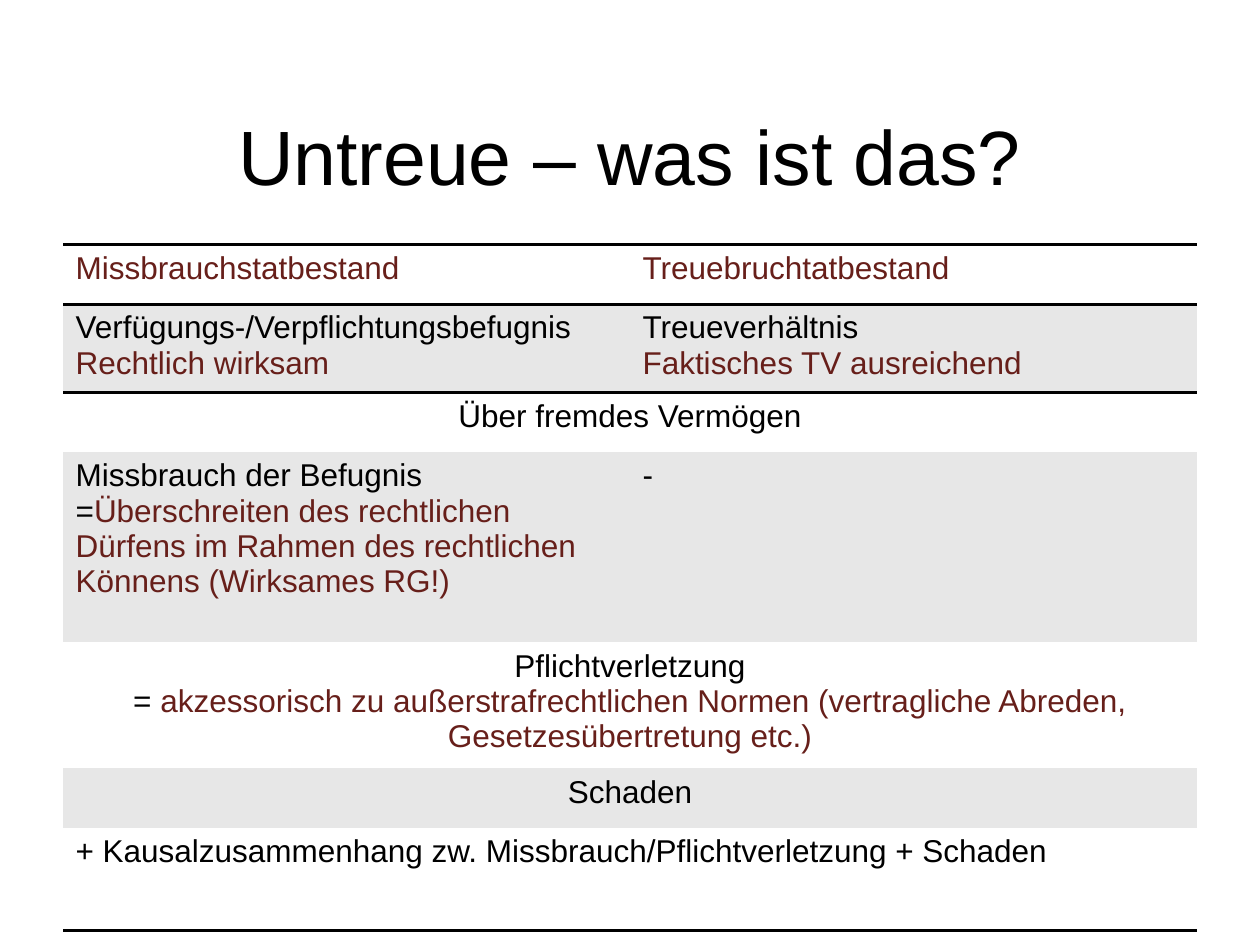
import pptx
import pptx.util
import pptx.dml.color
import pptx.enum.text
import pptx.oxml.ns
from lxml import etree
from pptx.util import Cm

BLACK, RED, GREY, WHITE = "000000", "671F1A", "E7E7E7", "FFFFFF"
PLAIN = "{2D5ABB26-0587-4C30-8999-92F81FD0307C}"  # table style without grid
ALIGN = pptx.enum.text.PP_ALIGN
ROWS = [1.2, 1.2, 1.2, 3.84, 1.2, 1.2, 2.06]

# Each cell is a list of lines, each line a list of (text, colour) runs
CELLS = [
    [[[("Missbrauchstatbestand", RED)]],
     [[("Treuebruchtatbestand", RED)]]],
    [[[("Verfügungs-/Verpflichtungsbefugnis", BLACK)],
      [("Rechtlich wirksam", RED)]],
     [[("Treueverhältnis", BLACK)],
      [("Faktisches TV ausreichend", RED)]]],
    [[[("Über fremdes Vermögen", BLACK)]]],
    [[[("Missbrauch der Befugnis =", BLACK),
       ("Überschreiten des rechtlichen Dürfens im Rahmen des "
        "rechtlichen Könnens (Wirksames RG!)", RED)]],
     [[("-", BLACK)]]],
    [[[("Pflichtverletzung", BLACK)],
      [("= ", BLACK),
       ("akzessorisch zu außerstrafrechtlichen Normen (vertragliche "
        "Abreden, Gesetzesübertretung etc.)", RED)]]],
    [[[("Schaden", BLACK)]]],
    [[[("+ Kausalzusammenhang zw. Missbrauch/Pflichtverletzung + Schaden",
        BLACK)]]],
]


def color(code):
    return pptx.dml.color.RGBColor.from_string(code)


def write(frame, lines, size=18, align=ALIGN.LEFT):
    """Fill a text frame with lines of coloured runs."""
    frame.word_wrap = True
    for i, line in enumerate(lines):
        para = frame.paragraphs[0] if i == 0 else frame.add_paragraph()
        para.alignment = align
        for text, code in line:
            run = para.add_run()
            run.text = text
            run.font.name = "Arial"
            run.font.size = pptx.util.Pt(size)
            run.font.color.rgb = color(code)


def rule(cell, side):
    """Draw a black 2 pt border on the side T or B of a cell."""
    qn = pptx.oxml.ns.qn
    props = cell._tc.get_or_add_tcPr()
    line = etree.SubElement(props, qn("a:ln" + side), w=str(pptx.util.Pt(2)))
    fill = etree.SubElement(line, qn("a:solidFill"))
    etree.SubElement(fill, qn("a:srgbClr"), val=BLACK)


def add_title(slide, text):
    box = slide.shapes.add_textbox(Cm(1.27), Cm(1.52), Cm(22.86), Cm(3.18))
    box.text_frame.vertical_anchor = pptx.enum.text.MSO_ANCHOR.MIDDLE
    write(box.text_frame, [[(text, BLACK)]], size=44, align=ALIGN.CENTER)


def add_grid(slide):
    frame = slide.shapes.add_table(len(ROWS), 2, Cm(1.27), Cm(4.93),
                                   Cm(22.86), Cm(sum(ROWS)))
    grid = frame.table
    grid._tbl.tblPr.find(pptx.oxml.ns.qn("a:tableStyleId")).text = PLAIN
    last = len(ROWS) - 1
    for r, (high, texts) in enumerate(zip(ROWS, CELLS)):
        grid.rows[r].height = Cm(high)
        # Borders come before the fill in the cell properties
        for cell in grid.rows[r].cells:
            for side in {0: "TB", 1: "T", last: "B"}.get(r, ""):
                rule(cell, side)
            cell.fill.solid()
            cell.fill.fore_color.rgb = color(GREY if r % 2 else WHITE)
        # A single text spans both columns
        whole = len(texts) == 1
        if whole:
            grid.cell(r, 0).merge(grid.cell(r, 1))
        align = ALIGN.CENTER if whole and r != last else ALIGN.LEFT
        for c, lines in enumerate(texts):
            write(grid.cell(r, c).text_frame, lines, align=align)


def main():
    deck = pptx.Presentation()
    deck.slide_width, deck.slide_height = Cm(25.4), Cm(19.05)
    slide = deck.slides.add_slide(deck.slide_layouts[6])
    add_title(slide, "Untreue – was ist das?")
    add_grid(slide)
    deck.save("out.pptx")


if __name__ == "__main__":
    main()
